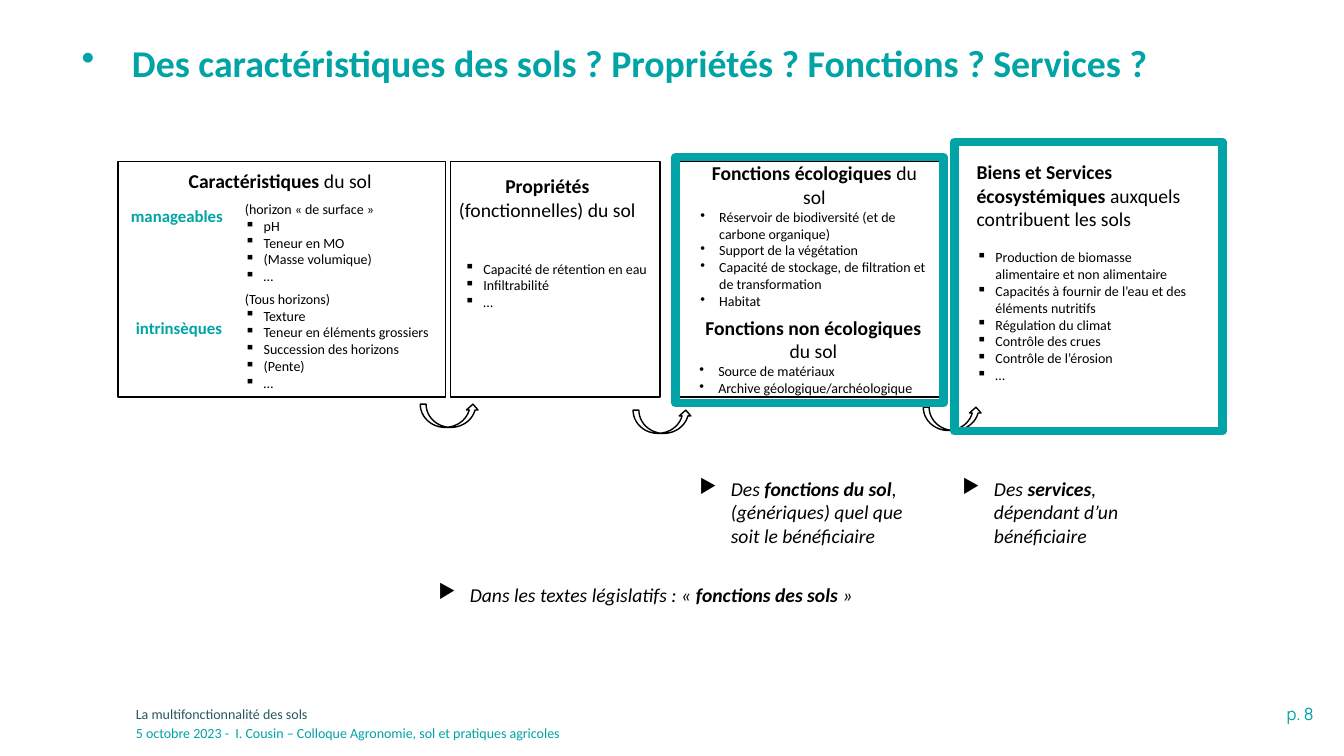
"""Build the slide on soil characteristics, properties, functions and services."""
from dataclasses import dataclass

import lxml.etree
import pptx
import pptx.dml.color
import pptx.enum.shapes
import pptx.enum.text
import pptx.oxml.ns
import pptx.slide
import pptx.util

ALIGN = pptx.enum.text.PP_ALIGN
SHAPE = pptx.enum.shapes.MSO_SHAPE


@dataclass(frozen=True)
class Theme:
    font: str = "Calibri"
    number_font: str = "Manrope"
    teal: str = "00A3A6"
    slate: str = "275662"
    black: str = "000000"
    white: str = "FFFFFF"
    title: float = 27
    heading: float = 14
    label: float = 12
    body: float = 10


THEME = Theme()


@dataclass(frozen=True)
class Span:
    text: str
    size: float = THEME.body
    bold: bool = False
    italic: bool = False
    colour: str = THEME.black
    font: str = THEME.font


@dataclass(frozen=True)
class Para:
    spans: tuple[Span, ...]
    align: ALIGN = ALIGN.LEFT
    bullet: str = ""
    indent: float = 0
    spacing: float = 1.0


@dataclass(frozen=True)
class Area:
    left: float
    top: float
    width: float
    height: float


@dataclass(frozen=True)
class Note:
    area: Area
    paras: tuple[Para, ...]
    inset: float = 7.2
    middle: bool = False


@dataclass(frozen=True)
class Figure:
    area: Area
    kind: SHAPE = SHAPE.RECTANGLE
    line: str = THEME.black
    weight: float = 1
    fill: str = ""


def line(text: str, size: float, colour: str, bold: bool = False) -> tuple[Para, ...]:
    return (Para((Span(text, size, bold, colour=colour),)),)


def heading(strong: str, plain: str, align: ALIGN = ALIGN.CENTER) -> tuple[Para, ...]:
    return (Para((Span(strong, THEME.heading, True), Span(plain, THEME.heading)), align),)


def items(bullet: str, *texts: str) -> tuple[Para, ...]:
    return tuple(Para((Span(text),), bullet=bullet, indent=13.5) for text in texts)


def remark(before: str, strong: str, after: str) -> tuple[Para, ...]:
    parts = ((before, False), (strong, True), (after, False))
    spans = tuple(Span(text, THEME.heading, bold, True) for text, bold in parts)
    return (Para(spans, bullet="▶", indent=22.5),)


PANELS = (
    Figure(Area(84.2, 115.2, 234, 168.5)),
    Figure(Area(321.8, 115.2, 149.8, 168.5)),
    Figure(Area(483.1, 115.2, 188.6, 168.5)),
    Figure(Area(682.6, 100.8, 188.6, 206.6), fill=THEME.white),
)
ARROWS = tuple(
    Figure(Area(left, top, 41.8, 16.6), SHAPE.CURVED_UP_ARROW)
    for left, top in ((300.2, 288.7), (452.2, 293), (659.5, 290.9))
)
FRAMES = (
    Figure(Area(482.4, 112.3, 191.5, 175.7), line=THEME.teal, weight=6),
    Figure(Area(681.8, 101.5, 191.5, 206.6), line=THEME.teal, weight=6),
)

TITLE = Span("Des caractéristiques des sols ? Propriétés ? Fonctions ? Services ?",
             THEME.title, True, colour=THEME.teal)
PAGE_NUMBER = Span("p. 8", THEME.label, colour=THEME.teal, font=THEME.number_font)

NOTES = (
    Note(Area(781.2, 499, 164.2, 21.6), (Para((PAGE_NUMBER,), ALIGN.RIGHT),)),
    Note(Area(90, 500.4, 528.5, 20.2),
         line("La multifonctionnalité des sols", THEME.body, THEME.slate)),
    Note(Area(90, 514.1, 528.5, 20.2),
         line("5 octobre 2023 -  I. Cousin – Colloque Agronomie, sol et pratiques agricoles",
              THEME.body, THEME.teal)),
    Note(Area(58.3, 11.5, 804.2, 69.8),
         (Para((TITLE,), bullet="•", indent=36, spacing=0.9),), 0, True),
    Note(Area(87.1, 117.4, 226.1, 24.5), heading("Caractéristiques", " du sol")),
    Note(Area(86.4, 143.3, 113, 21.6), line("manageables", THEME.label, THEME.teal, True)),
    Note(Area(90, 223.2, 113, 21.6), line("intrinsèques", THEME.label, THEME.teal, True)),
    Note(Area(167.8, 203.8, 191.5, 79.9),
         line("(Tous horizons)", THEME.body, THEME.black)
         + items("▪", "Texture", "Teneur en éléments grossiers",
                 "Succession des horizons", "(Pente)", "…")),
    Note(Area(167.8, 139.7, 115, 67.7),
         line("(horizon « de surface »", THEME.body, THEME.black)
         + items("▪", "pH", "Teneur en MO", "(Masse volumique)", "…")),
    Note(Area(319, 121, 144, 41), heading("Propriétés", " (fonctionnelles) du sol")),
    Note(Area(324.7, 182.2, 154, 43.9),
         items("▪", "Capacité de rétention en eau", "Infiltrabilité", "…")),
    Note(Area(493.2, 111.6, 177.1, 113.8),
         heading("Fonctions écologiques", " du sol")
         + items("•", "Réservoir de biodiversité (et de carbone organique)",
                 "Support de la végétation",
                 "Capacité de stockage, de filtration et de transformation", "Habitat")),
    Note(Area(492.5, 221.8, 177.1, 65.5),
         heading("Fonctions non écologiques ", "du sol")
         + items("•", "Source de matériaux", "Archive géologique/archéologique")),
    Note(Area(690.5, 110.9, 169.9, 58.3),
         heading("Biens et Services écosystémiques ", "auxquels contribuent les sols",
                 ALIGN.LEFT)),
    Note(Area(690.5, 174.2, 169.9, 104.4),
         items("▪", "Production de biomasse alimentaire et non alimentaire",
               "Capacités à fournir de l’eau et des éléments nutritifs",
               "Régulation du climat", "Contrôle des crues", "Contrôle de l’érosion", "…")),
    Note(Area(492.5, 337, 177.1, 58.3),
         remark("Des ", "fonctions du sol", ", (génériques) quel que soit le bénéficiaire")),
    Note(Area(680.4, 337, 128.2, 58.3),
         remark("Des ", "services", ", dépendant d’un bénéficiaire")),
    Note(Area(306, 412.6, 317, 24.5),
         remark("Dans les textes législatifs : « ", "fonctions des sols ", "»")),
)


def rgb(colour: str) -> pptx.dml.color.RGBColor:
    return pptx.dml.color.RGBColor.from_string(colour)


def place(area: Area) -> tuple[pptx.util.Length, ...]:
    return tuple(pptx.util.Pt(n) for n in (area.left, area.top, area.width, area.height))


def draw_figure(page: pptx.slide.Slide, figure: Figure) -> None:
    shape = page.shapes.add_shape(figure.kind, *place(figure.area))
    shape.shadow.inherit = False
    shape.line.color.rgb = rgb(figure.line)
    shape.line.width = pptx.util.Pt(figure.weight)
    if figure.fill:
        shape.fill.solid()
        shape.fill.fore_color.rgb = rgb(figure.fill)
    else:
        shape.fill.background()


def draw_note(page: pptx.slide.Slide, note: Note) -> None:
    frame = page.shapes.add_textbox(*place(note.area)).text_frame
    frame.word_wrap = True
    frame.margin_left = pptx.util.Pt(note.inset)
    if note.middle:
        frame.vertical_anchor = pptx.enum.text.MSO_ANCHOR.MIDDLE
    for index, content in enumerate(note.paras):
        para = frame.add_paragraph() if index else frame.paragraphs[0]
        para.alignment = content.align
        para.line_spacing = content.spacing
        if content.bullet:
            settings = para._p.get_or_add_pPr()
            indent = pptx.util.Pt(content.indent)
            settings.set("marL", str(indent))
            settings.set("indent", str(-indent))
            mark = lxml.etree.SubElement(settings, pptx.oxml.ns.qn("a:buChar"))
            mark.set("char", content.bullet)
        for span in content.spans:
            run = para.add_run()
            run.text = span.text
            run.font.name = span.font
            run.font.size = pptx.util.Pt(span.size)
            run.font.bold = span.bold
            run.font.italic = span.italic
            run.font.color.rgb = rgb(span.colour)


def main() -> None:
    deck = pptx.Presentation()
    deck.slide_width, deck.slide_height = pptx.util.Pt(960), pptx.util.Pt(540)
    page = deck.slides.add_slide(deck.slide_layouts[6])
    for panel in PANELS:
        draw_figure(page, panel)
    for note in NOTES:
        draw_note(page, note)
    for figure in ARROWS + FRAMES:
        draw_figure(page, figure)
    deck.save("out.pptx")


if __name__ == "__main__":
    main()
